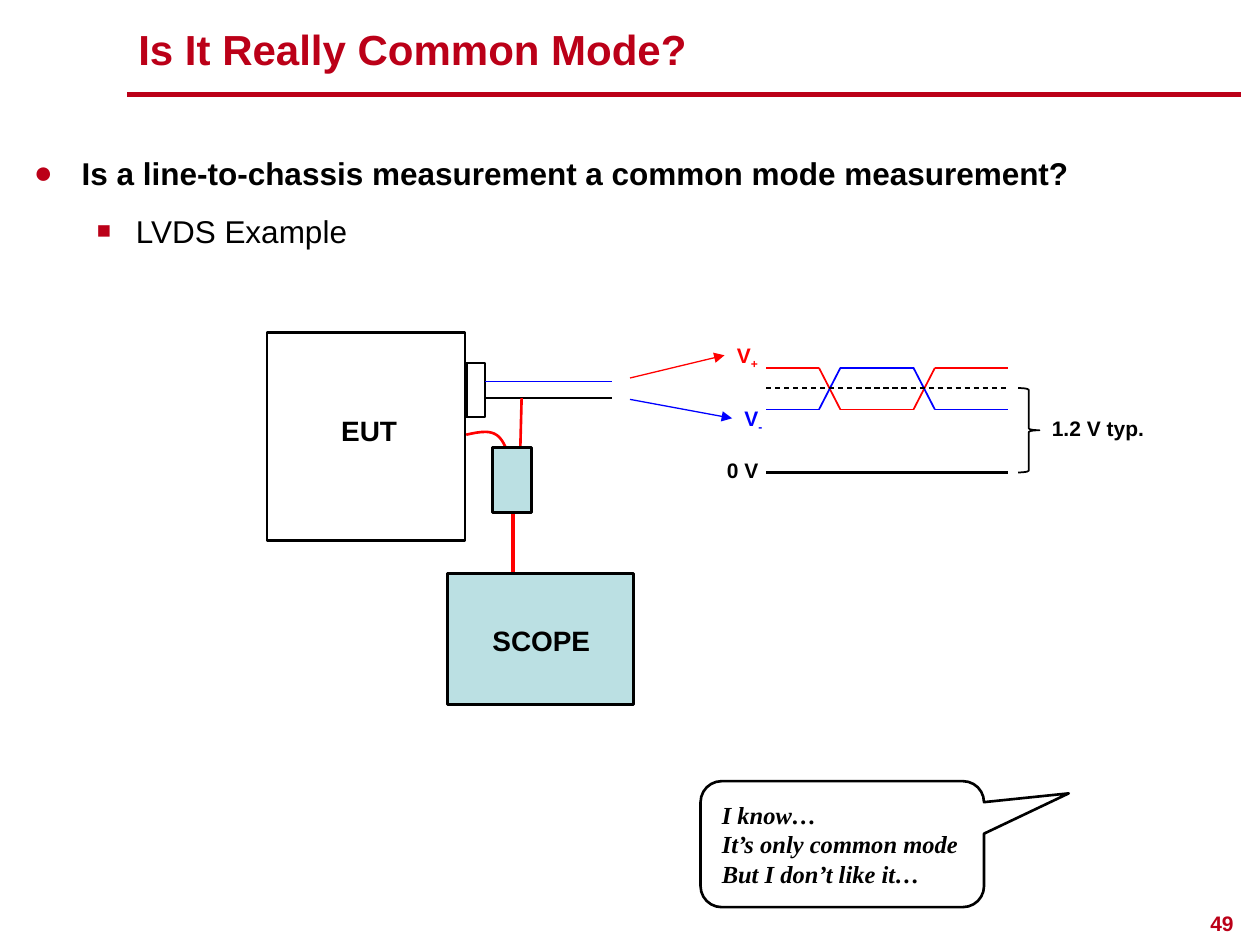
import pptx
import pptx.dml.color
import pptx.enum.dml
import pptx.enum.shapes
import pptx.enum.text
import pptx.oxml.ns
import pptx.util
from lxml import etree
from pptx.util import Inches

COLORS = {"crimson": "BB0018", "black": "000000", "white": "FFFFFF",
          "red": "FF0000", "blue": "0000FF", "teal": "BBE0E3"}
SHAPES = pptx.enum.shapes.MSO_SHAPE
ALIGN = pptx.enum.text.PP_ALIGN


def rgb(name):
    return pptx.dml.color.RGBColor.from_string(COLORS[name])


def add_xml(parent, tag, **attributes):
    return etree.SubElement(parent, pptx.oxml.ns.qn(tag), attributes)


def style_font(font, size, color="black", bold=True, italic=False, name="Arial"):
    font.name, font.size = name, pptx.util.Pt(size)
    font.bold, font.italic = bold, italic
    font.color.rgb = rgb(color)


def add_line(slide, start, end, color, width, dashed=False, arrow=False):
    points = [Inches(value) for value in (*start, *end)]
    connector = slide.shapes.add_connector(
        pptx.enum.shapes.MSO_CONNECTOR.STRAIGHT, *points)
    connector.line.color.rgb = rgb(color)
    connector.line.width = pptx.util.Pt(width)
    if dashed:
        connector.line.dash_style = pptx.enum.dml.MSO_LINE.DASH
    if arrow:
        add_xml(connector.line._get_or_add_ln(), "a:tailEnd", type="triangle")
    add_xml(connector._element.spPr, "a:effectLst")


def style_shape(shape, fill, color="black", width=1.5):
    shape.shadow.inherit = False
    if fill:
        shape.fill.solid()
        shape.fill.fore_color.rgb = rgb(fill)
    else:
        shape.fill.background()
    shape.line.color.rgb = rgb(color)
    shape.line.width = pptx.util.Pt(width)


def add_outline(slide, kind, left, top, width, height, fill=None,
                line_width=1.5, adjustments=()):
    shape = slide.shapes.add_shape(
        kind, Inches(left), Inches(top), Inches(width), Inches(height))
    style_shape(shape, fill, width=line_width)
    for index, value in enumerate(adjustments):
        shape.adjustments[index] = value


def add_text(slide, left, top, width, height, lines, size, wrap=False,
             align=ALIGN.LEFT, **font):
    box = slide.shapes.add_textbox(
        Inches(left), Inches(top), Inches(width), Inches(height))
    frame = box.text_frame
    frame.word_wrap = wrap
    frame.text = "\n".join(lines)
    for paragraph in frame.paragraphs:
        paragraph.alignment = align
        style_font(paragraph.font, size, **font)
    return frame


def add_header(slide, left, top, width):
    frame = add_text(slide, left, top, 7.93, 0.44, ["Is It Really Common Mode?"],
                     24, wrap=True, color="crimson")
    frame.vertical_anchor = pptx.enum.text.MSO_ANCHOR.MIDDLE
    add_line(slide, (left + 0.01, top + 0.58), (left + width, top + 0.58), "crimson", 3)


def add_bullets(slide, left, top, width, height):
    bullets = [("Is a line-to-chassis measurement a common mode measurement?",
                "●", 100, 0.38, 0.38, 8, True),
               ("LVDS Example", "■", 75, 0.81, 0.31, 6, False)]
    frame = add_text(slide, left, top, width, height,
                     [bullet[0] for bullet in bullets], 18, wrap=True)
    for level, (paragraph, bullet) in enumerate(zip(frame.paragraphs, bullets)):
        _, symbol, scale, margin, hanging, after, bold = bullet
        # Bullet elements go before the default run properties
        properties = paragraph._p.get_or_add_pPr()
        for child in list(properties):
            properties.remove(child)
        properties.set("marL", str(Inches(margin)))
        properties.set("indent", str(-Inches(hanging)))
        color = add_xml(properties, "a:buClr")
        add_xml(color, "a:srgbClr", val=COLORS["crimson"])
        add_xml(properties, "a:buSzPct", val=str(scale * 1000))
        add_xml(properties, "a:buFont", typeface="Arial")
        add_xml(properties, "a:buChar", char=symbol)
        paragraph.level = level
        paragraph.space_after = pptx.util.Pt(after)
        if level:
            paragraph.space_before = pptx.util.Pt(3.6)
        style_font(paragraph.font, 18, bold=bold)


def add_probe_lead(slide, points, steps=16):
    """Draw a smooth lead along the cubic curve of four control points."""
    def curve(t):
        weights = ((1 - t) ** 3, 3 * t * (1 - t) ** 2, 3 * t * t * (1 - t), t ** 3)
        return tuple(Inches(sum(weight * point[axis]
                                for weight, point in zip(weights, points)))
                     for axis in (0, 1))

    start, *rest = [curve(step / steps) for step in range(steps + 1)]
    builder = slide.shapes.build_freeform(*start)
    builder.add_line_segments(rest, close=False)
    style_shape(builder.convert_to_shape(), None, "red")


def add_test_setup(slide, left, top):
    # Probe cable, equipment and connector
    add_line(slide, (left + 1.95, top + 1.43), (left + 1.95, top + 1.91), "red", 2.25)
    add_outline(slide, SHAPES.RECTANGLE, left, top, 1.57, 1.65)
    add_outline(slide, SHAPES.RECTANGLE, left + 1.58, top + 0.24, 0.15, 0.43)
    # Signal pair and probe leads
    for offset, color in ((0.39, "blue"), (0.52, "black")):
        add_line(slide, (left + 1.73, top + offset), (left + 2.74, top + offset),
                 color, 0.75)
    add_line(slide, (left + 2.02, top + 0.52), (left + 2.01, top + 0.9), "red", 1.5)
    add_probe_lead(slide, [(left + 1.58, top + 0.81), (left + 1.76, top + 0.77),
                           (left + 1.84, top + 0.77), (left + 1.9, top + 0.93)])
    # Probe, scope and their labels
    add_outline(slide, SHAPES.RECTANGLE, left + 1.79, top + 0.91, 0.31, 0.52, "teal")
    add_outline(slide, SHAPES.RECTANGLE, left + 1.43, top + 1.91, 1.48, 1.04, "teal")
    add_text(slide, left + 1.69, top + 2.26, 0.98, 0.37, ["SCOPE"], 16)
    add_text(slide, left + 0.49, top + 0.59, 0.65, 0.37, ["EUT"], 16)


def add_signal_label(slide, left, top, width, sign, color):
    frame = add_text(slide, left, top, width, 0.3, ["V"], 12, color=color)
    run = frame.paragraphs[0].add_run()
    run.text = sign
    run.font._element.set("baseline", "-25000")


def add_waveforms(slide, left, top):
    high, low, ground = top, top + 0.33, top + 0.83
    middle, right = top + 0.16, left + 1.92
    # Complementary traces swap levels at each crossing
    edges = [left + offset for offset in (0, 0.42, 0.59, 1.17, 1.34, 1.92)]
    for color, first, second in (("red", high, low), ("blue", low, high)):
        levels = (first, first, second, second, first, first)
        points = list(zip(edges, levels))
        for start, end in zip(points, points[1:]):
            add_line(slide, start, end, color, 1)
    # Reference levels and offset brace
    add_line(slide, (left, ground), (right, ground), "black", 1.5)
    add_line(slide, (left, middle), (right, middle), "black", 0.75, dashed=True)
    add_outline(slide, SHAPES.RIGHT_BRACE, left + 2, middle, 0.17, 0.67,
                line_width=1, adjustments=(0.083, 0.5))
    # Labels and arrows from the signal pair
    add_signal_label(slide, left - 0.33, top - 0.25, 0.38, "+", "red")
    add_signal_label(slide, left - 0.27, top + 0.25, 0.34, "-", "blue")
    add_text(slide, left - 0.41, top + 0.66, 0.45, 0.3, ["0 V"], 12)
    add_text(slide, left + 2.17, top + 0.33, 0.94, 0.3, ["1.2 V typ."], 12)
    add_line(slide, (left - 1.08, top + 0.08), (left - 0.33, top - 0.1),
             "red", 0.75, arrow=True)
    add_line(slide, (left - 1.08, top + 0.25), (left - 0.27, top + 0.4),
             "blue", 0.75, arrow=True)


def add_callout(slide, left, top, width, height):
    add_outline(slide, SHAPES.ROUNDED_RECTANGULAR_CALLOUT, left, top, width, height,
                "white", adjustments=(0.799, -0.403, 0.167))
    add_text(slide, left + 0.07, top + 0.1, 2.09, 0.81,
             ["I know…", "It’s only common mode", "But I don’t like it…"],
             14, italic=True, name="Times New Roman")


def add_page_number(slide, left, top):
    frame = add_text(slide, left, top, 0.41, 0.28, ["49"], 12,
                     align=ALIGN.RIGHT, color="crimson")
    frame.paragraphs[0].line_spacing = 0.9


def main():
    presentation = pptx.Presentation()
    presentation.slide_width, presentation.slide_height = Inches(10), Inches(7.5)
    slide = presentation.slides.add_slide(presentation.slide_layouts[6])
    add_page_number(slide, 9.48, 7.2)
    add_header(slide, 1, 0.17, 8.85)
    add_bullets(slide, 0.17, 1.17, 9.62, 5.81)
    add_test_setup(slide, 2.12, 2.64)
    add_waveforms(slide, 6.08, 2.92)
    add_callout(slide, 5.56, 6.2, 2.25, 1)
    presentation.save("out.pptx")


if __name__ == "__main__":
    main()
